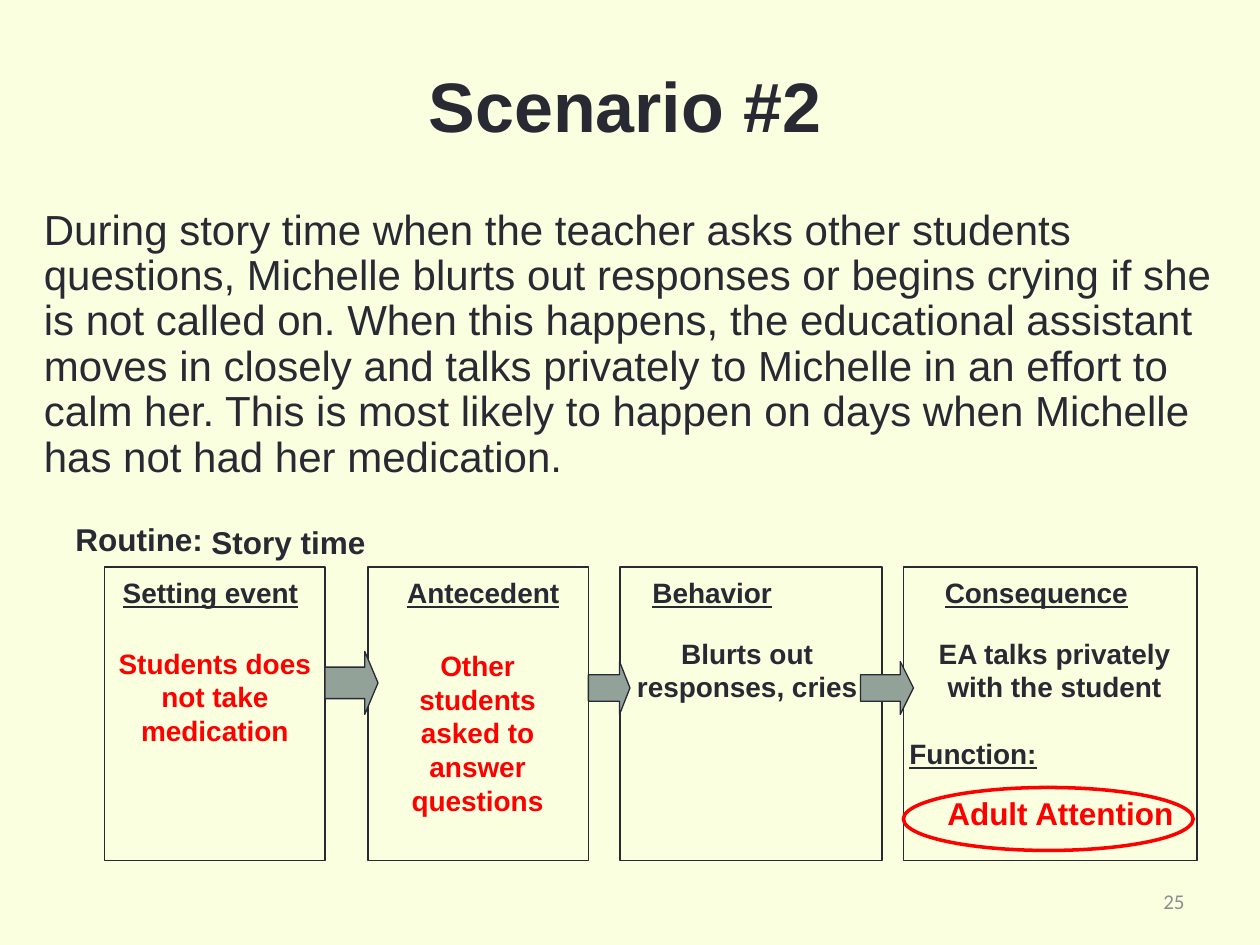
from pptx import Presentation
from pptx.dml.color import RGBColor
from pptx.enum.shapes import MSO_SHAPE as SHAPE
from pptx.enum.text import MSO_ANCHOR as ANCHOR, PP_ALIGN as ALIGN
from pptx.util import Inches, Pt

CREAM = RGBColor(0xFA, 0xFF, 0xE0)
INK = RGBColor(0x29, 0x29, 0x34)
RED = RGBColor(0xFF, 0x00, 0x00)
SAGE = RGBColor(0x93, 0xA2, 0x99)
GREY = RGBColor(0x8D, 0x8D, 0x8F)


class SlideBuilder:
    """Holds the text style and the current slide."""

    text_style = {"name": "Arial", "size": Pt(16), "bold": True}

    def __init__(self, prs):
        self.s = prs.slides.add_slide(prs.slide_layouts[5])
        fill = self.s.background.fill
        fill.solid()
        fill.fore_color.rgb = CREAM

    def fill_text(self, tf, paragraphs, align, color=INK, spacing=None, gap=None,
                  **style):
        tf.vertical_anchor = ANCHOR.TOP
        for i, text in enumerate(paragraphs):
            p = tf.paragraphs[0] if i == 0 else tf.add_paragraph()
            p.alignment = align
            p.line_spacing = spacing
            if i and gap:
                p.space_before = gap
            r = p.add_run()
            r.text = text
            for key, value in {**self.text_style, **style}.items():
                setattr(r.font, key, value)
            r.font.color.rgb = color

    def title(self, box, text, **style):
        sp = self.s.shapes.title
        sp.left, sp.top, sp.width, sp.height = map(Inches, box)
        self.fill_text(sp.text_frame, [text], ALIGN.CENTER, **style)

    def text(self, box, *paragraphs, align=ALIGN.LEFT, wrap=True, **style):
        tf = self.s.shapes.add_textbox(*map(Inches, box)).text_frame
        tf.word_wrap = wrap
        self.fill_text(tf, paragraphs, align, **style)
        return tf

    def shape(self, kind, box, fill=None, line=INK, width=0.75):
        sp = self.s.shapes.add_shape(kind, *map(Inches, box))
        sp.shadow.inherit = False
        if fill is None:
            sp.fill.background()
        else:
            sp.fill.solid()
            sp.fill.fore_color.rgb = fill
        sp.line.color.rgb = line
        sp.line.width = Pt(width)
        return sp

    def arrow(self, box):
        sp = self.shape(SHAPE.RIGHT_ARROW, box, fill=SAGE)
        sp.adjustments[0], sp.adjustments[1] = 0.5, 0.25


def main():
    prs = Presentation()
    prs.slide_width, prs.slide_height = Inches(10), Inches(7.5)
    b = SlideBuilder(prs)

    # Title and scenario
    b.title((0.17, 0.52, 9.58, 0.75), "Scenario #2", size=Pt(40), spacing=0.9)
    b.text((0.25, 1.61, 9.58, 2.3),
           "During story time when the teacher asks other students questions, "
           "Michelle blurts out responses or begins crying if she is not called on. "
           "When this happens, the educational assistant moves in closely and talks "
           "privately to Michelle in an effort to calm her. This is most likely to "
           "happen on days when Michelle has not had her medication.",
           size=Pt(24), bold=False, spacing=0.9)

    # Routine
    b.text((0.5, 4.08, 3.42, 0.4), "Routine:", size=Pt(18))
    b.text((1.58, 4.1, 3.33, 0.4), "Story time", size=Pt(18))

    # Step frames and the arrows between them
    for left, width in ((0.83, 1.75), (2.92, 1.75), (4.92, 2.08), (7.17, 2.33)):
        b.shape(SHAPE.RECTANGLE, (left, 4.5, width, 2.33))
    for box in ((2.58, 5.17, 0.42, 0.5), (4.67, 5.25, 0.33, 0.42),
                (6.83, 5.25, 0.42, 0.42)):
        b.arrow(box)

    # Step headings
    for left, width, heading, align, wrap in (
            (0.87, 1.6, "Setting event", ALIGN.CENTER, False),
            (3.13, 1.41, "Antecedent", ALIGN.CENTER, False),
            (5.08, 1.58, "Behavior", ALIGN.LEFT, True),
            (7.4, 1.65, "Consequence", ALIGN.LEFT, False)):
        b.text((left, 4.52, width, 0.37), heading, align=align, wrap=wrap,
               underline=True)

    # Step details
    for box, detail, color in (
            ((0.83, 5.08, 1.75, 0.91), "Students does not take medication", RED),
            ((3.08, 5.1, 1.42, 1.45), "Other students asked to answer questions", RED),
            ((4.93, 5, 2, 0.91), "Blurts out responses, cries", INK)):
        b.text(box, detail, align=ALIGN.CENTER, color=color)

    # Consequence detail and function
    tf = b.text((7.12, 5, 2.5, 1.18), "EA talks privately with the student",
                "Function:", align=ALIGN.CENTER, gap=Pt(19))
    function = tf.paragraphs[1]
    function.alignment = ALIGN.LEFT
    function.runs[0].font.underline = True
    b.shape(SHAPE.OVAL, (7.17, 6.25, 2.3, 0.5), line=RED, width=2)
    b.text((7.42, 6.25, 2.05, 0.4), "Adult Attention", color=RED, size=Pt(18))

    # Slide number
    tf = b.text((7.17, 6.95, 2.33, 0.4), "25", align=ALIGN.RIGHT, color=GREY,
                name="Calibri", size=Pt(12), bold=False)
    tf.vertical_anchor = ANCHOR.MIDDLE

    prs.save("out.pptx")


if __name__ == "__main__":
    main()
